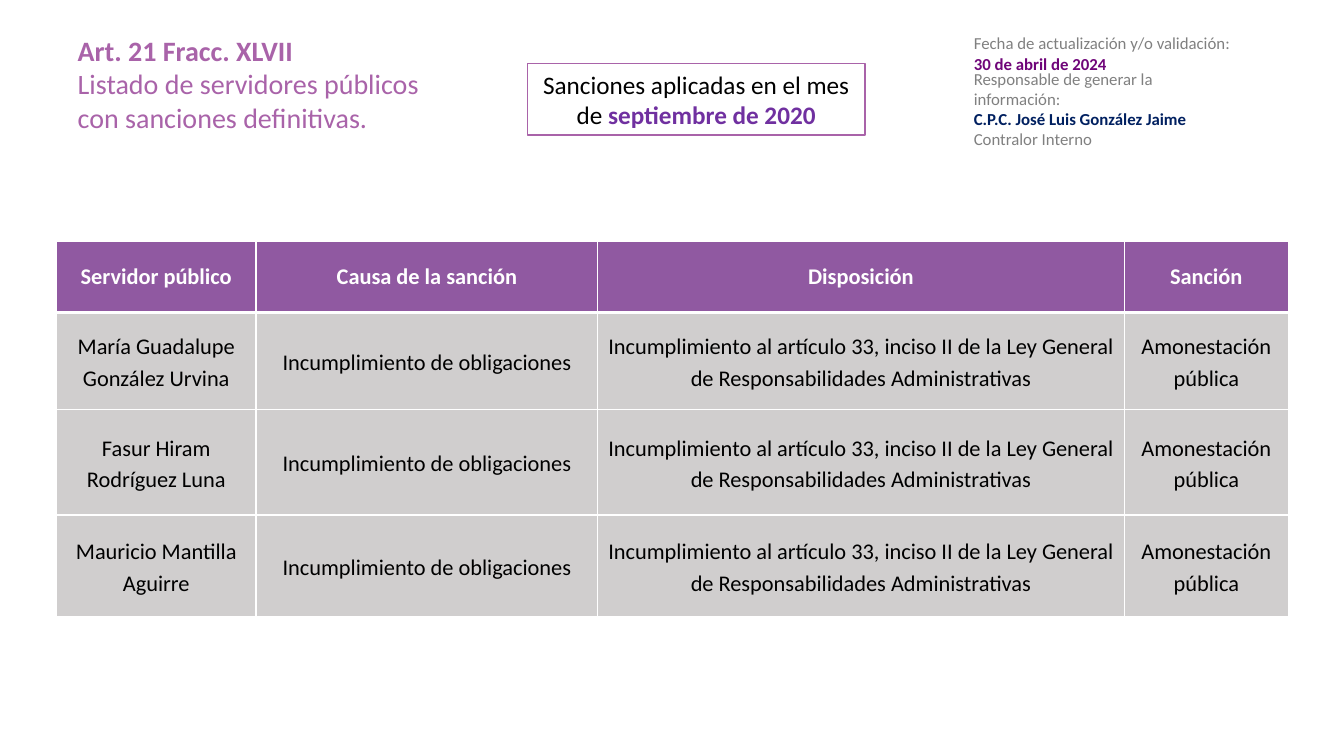
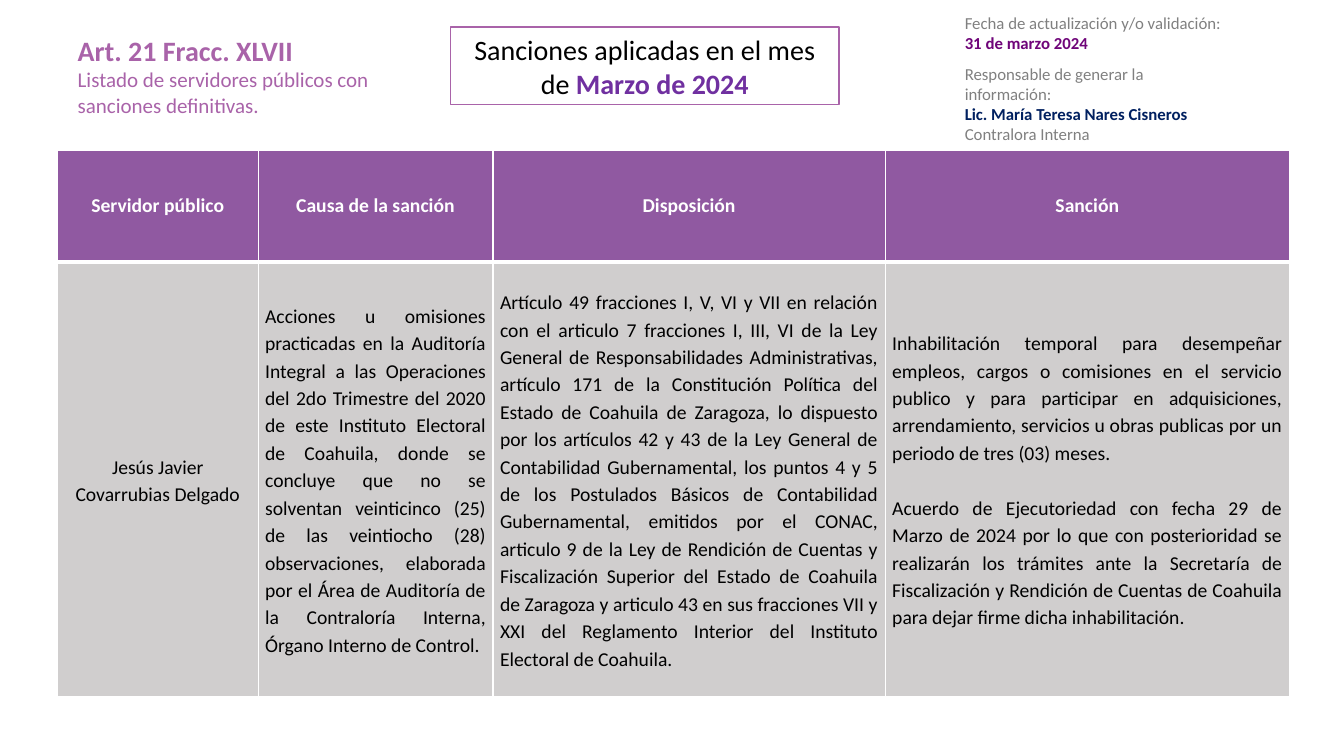
from lxml.etree import SubElement
from pptx import Presentation
from pptx.dml.color import RGBColor
from pptx.enum.shapes import MSO_SHAPE
from pptx.enum.text import MSO_ANCHOR, MSO_AUTO_SIZE, PP_ALIGN
from pptx.oxml.ns import qn
from pptx.util import Inches, Pt

# Shared look
FONT = "Calibri"
WHITE, BLACK, GREY = "FFFFFF", "000000", "808080"
LILAC, HEADER, BODY = "A963A9", "9059A1", "D0CECE"
DATE, MONTH, OFFICER = "6F0579", "7030A0", "002060"
LEFT, CENTER, JUSTIFY = PP_ALIGN.LEFT, PP_ALIGN.CENTER, PP_ALIGN.JUSTIFY

# Content
HEADINGS = ["Servidor público", "Causa de la sanción", "Disposición", "Sanción"]
ARTICLE = "Art. 21 Fracc. XLVII"
SUBJECT = "Listado de servidores públicos con sanciones definitivas."
BREACH = [
    "Incumplimiento de obligaciones",
    "Incumplimiento al artículo 33, inciso II de la Ley General de "
    "Responsabilidades Administrativas",
    "Amonestación pública",
]
SLIDES = [
    {
        "title_area": (0.67, 0.28, 3.85, 1.45), "subject_size": 20,
        "month": "septiembre de 2020", "month_area": (5.23, 0.63, 3.35, 0.71),
        "month_size": 18,
        "date": "30 de abril de 2024", "date_area": (9.56, 0.28, 2.81, 0.5),
        "officer": "C.P.C. José Luis González Jaime", "post": "Contralor Interno",
        "officer_area": (9.56, 0.63, 2.65, 0.91),
        "table_corner": (0.56, 2.39), "table_size": 16,
        "columns": [1.98, 3.39, 5.22, 1.63], "rows": [0.71, 0.96, 1.05, 1.01],
        "aligns": [CENTER] * 4,
        "records": [
            ["María Guadalupe González Urvina", *BREACH],
            ["Fasur Hiram Rodríguez Luna", *BREACH],
            ["Mauricio Mantilla Aguirre", *BREACH],
        ],
    },
    {
        "title_area": (0.67, 0.28, 3.51, 1.28), "subject_size": 15,
        "month": "Marzo de 2024", "month_area": (4.47, 0.27, 3.85, 0.77),
        "month_size": 20,
        "date": "31 de marzo 2024", "date_area": (9.47, 0.08, 2.81, 0.5),
        "officer": "Lic. María Teresa Nares Cisneros", "post": "Contralora Interna",
        "officer_area": (9.47, 0.58, 2.65, 0.91),
        "table_corner": (0.57, 1.49), "table_size": 14,
        "columns": [1.99, 2.33, 3.89, 4.01], "rows": [1.11, 4.31],
        "aligns": [CENTER, JUSTIFY, JUSTIFY, JUSTIFY],
        "records": [[
            "Jesús Javier Covarrubias Delgado",
            "Acciones u omisiones practicadas en la Auditoría Integral a las "
            "Operaciones del 2do Trimestre del 2020 de este Instituto Electoral de "
            "Coahuila, donde se concluye que no se solventan veinticinco (25) de las "
            "veintiocho (28) observaciones, elaborada por el Área de Auditoría de la "
            "Contraloría Interna, Órgano Interno de Control.",
            "Artículo 49 fracciones I, V, VI y VII en relación con el articulo 7 "
            "fracciones I, III, VI de la Ley General de Responsabilidades "
            "Administrativas, artículo 171 de la Constitución Política del Estado de "
            "Coahuila de Zaragoza, lo dispuesto por los artículos 42 y 43 de la Ley "
            "General de Contabilidad Gubernamental, los puntos 4 y 5 de los Postulados "
            "Básicos de Contabilidad Gubernamental, emitidos por el CONAC, articulo 9 "
            "de la Ley de Rendición de Cuentas y Fiscalización Superior del Estado de "
            "Coahuila de Zaragoza y articulo 43 en sus fracciones VII y XXI del "
            "Reglamento Interior del Instituto Electoral de Coahuila.",
            "Inhabilitación temporal para desempeñar empleos, cargos o comisiones en "
            "el servicio publico y para participar en adquisiciones, arrendamiento, "
            "servicios u obras publicas por un periodo de tres (03) meses.\n"
            "Acuerdo de Ejecutoriedad con fecha 29 de Marzo de 2024 por lo que con "
            "posterioridad se realizarán los trámites ante la Secretaría de "
            "Fiscalización y Rendición de Cuentas de Coahuila para dejar firme dicha "
            "inhabilitación.",
        ]],
    },
]


def color(value):
    return RGBColor.from_string(value)


def write(frame, paragraphs, align=LEFT, spacing=1.0, gap=0):
    """Each paragraph is a list of (text, size, colour, bold) runs."""
    frame.word_wrap = True
    for index, runs in enumerate(paragraphs):
        para = frame.add_paragraph() if index else frame.paragraphs[0]
        para.alignment, para.line_spacing = align, spacing
        para.space_before = Pt(gap if index else 0)
        for text, size, tint, bold in runs:
            span = para.add_run()
            span.text = text
            span.font.name, span.font.size, span.font.bold = FONT, Pt(size), bold
            span.font.color.rgb = color(tint)


def add_title(page, item):
    title = page.shapes.title
    title.left, title.top, title.width, title.height = map(Inches, item["title_area"])
    frame = title.text_frame
    frame.auto_size, frame.vertical_anchor = MSO_AUTO_SIZE.NONE, MSO_ANCHOR.TOP
    write(frame, [[(ARTICLE, 20, LILAC, True)],
                  [(SUBJECT, item["subject_size"], LILAC, False)]])


def add_note(page, area, lines):
    box = page.shapes.add_textbox(*map(Inches, area))
    write(box.text_frame, [[(text, 12, tint, bold)] for text, tint, bold in lines])


def add_month(page, item):
    box = page.shapes.add_shape(MSO_SHAPE.RECTANGLE, *map(Inches, item["month_area"]))
    box.shadow.inherit = False
    box.fill.solid()
    box.fill.fore_color.rgb = color(WHITE)
    box.line.color.rgb, box.line.width = color(LILAC), Pt(1)
    size = item["month_size"]
    box.text_frame.vertical_anchor = MSO_ANCHOR.MIDDLE
    write(box.text_frame, [[("Sanciones aplicadas en el mes de ", size, BLACK, False),
                            (item["month"], size, MONTH, True)]], CENTER)


def style_cell(cell, fill, bottom):
    cell.vertical_anchor = MSO_ANCHOR.MIDDLE
    cell.fill.solid()
    cell.fill.fore_color.rgb = color(fill)
    properties = cell._tc.get_or_add_tcPr()
    for index, (edge, width) in enumerate([("lnL", 1), ("lnR", 1), ("lnB", bottom)]):
        line = SubElement(properties, qn("a:" + edge), w=str(Pt(width)))
        paint = SubElement(line, qn("a:solidFill"))
        SubElement(paint, qn("a:srgbClr"), val=WHITE)
        properties.insert(index, line)


def add_sanctions(page, item):
    columns, rows, size = item["columns"], item["rows"], item["table_size"]
    area = (*item["table_corner"], sum(columns), sum(rows))
    table = page.shapes.add_table(len(rows), len(columns), *map(Inches, area)).table
    for column, width in zip(table.columns, columns):
        column.width = Inches(width)
    for row, height in zip(table.rows, rows):
        row.height = Inches(height)
    for column, heading in enumerate(HEADINGS):
        cell = table.cell(0, column)
        style_cell(cell, HEADER, 3)
        write(cell.text_frame, [[(heading, size, WHITE, True)]], CENTER)
    for row, record in enumerate(item["records"], 1):
        for column, text in enumerate(record):
            cell = table.cell(row, column)
            style_cell(cell, BODY, 1)
            cell.margin_left = cell.margin_right = Inches(0.07)
            cell.margin_top = cell.margin_bottom = 0
            write(cell.text_frame,
                  [[(part, size, BLACK, False)] for part in text.split("\n")],
                  item["aligns"][column], 1.15, gap=size * 1.4)


def main():
    deck = Presentation()
    deck.slide_width, deck.slide_height = Inches(13.33), Inches(7.5)
    for item in SLIDES:
        page = deck.slides.add_slide(deck.slide_layouts[5])
        add_title(page, item)
        add_note(page, item["date_area"], [
            ("Fecha de actualización y/o validación:", GREY, False),
            (item["date"], DATE, True)])
        add_note(page, item["officer_area"], [
            ("Responsable de generar la información:", GREY, False),
            (item["officer"], OFFICER, True),
            (item["post"], GREY, False)])
        add_sanctions(page, item)
        add_month(page, item)
    deck.save("out.pptx")


if __name__ == "__main__":
    main()
